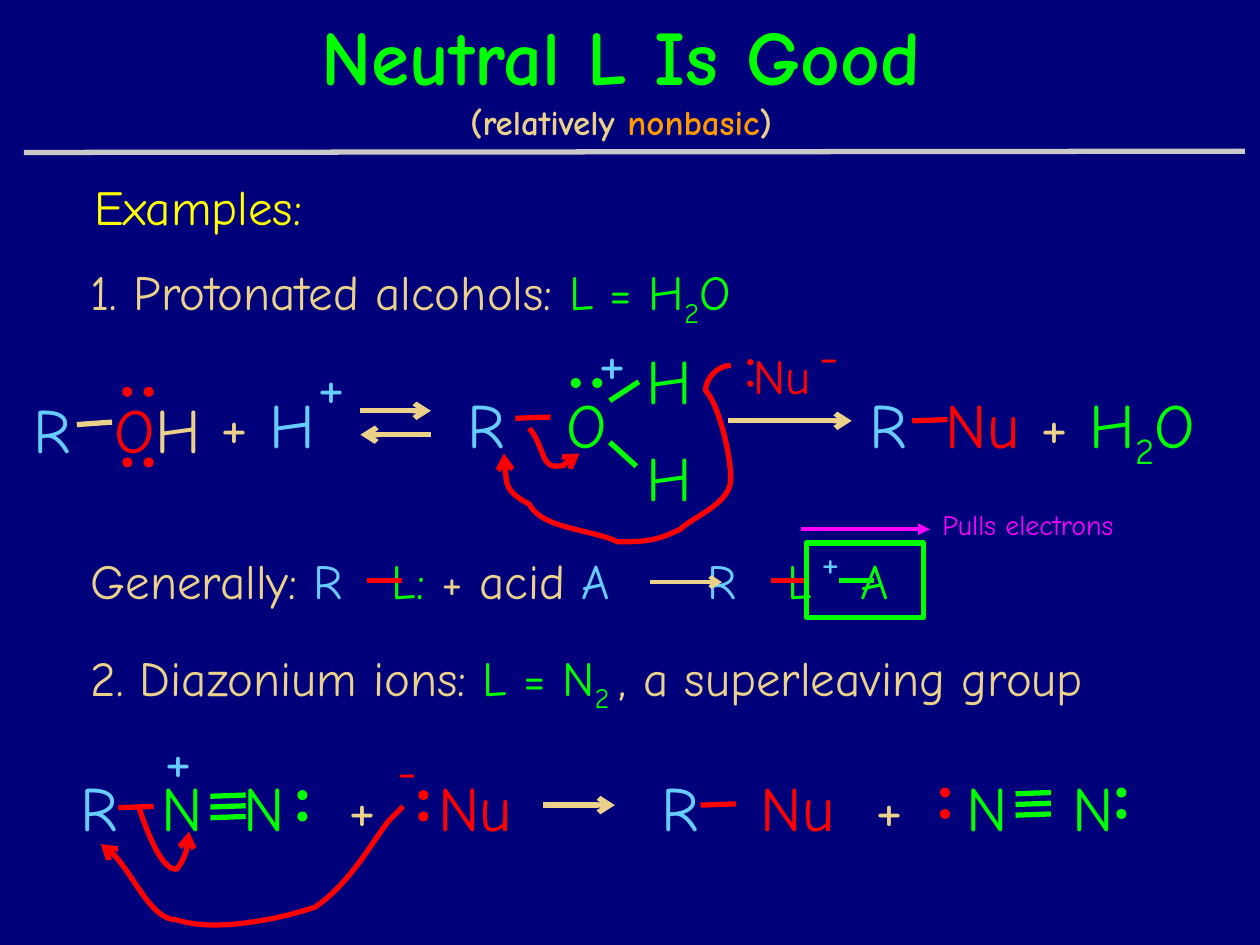
import pptx
import pptx.util
import pptx.dml.color
import pptx.enum.shapes
import pptx.enum.text
import lxml.etree

theme = {
    "font": "Comic Neue",
    "back": "00007A", "tan": "EBD189", "lime": "00FF00", "red": "FF0000",
    "sky": "66CCFF", "sun": "FFFF00", "pink": "FF00FF", "gold": "FF9900",
    "gray": "C9C9C9",
    "title": 44, "big": 36, "mid": 28, "sign": 24, "sub": 20, "note": 16,
    "thick": 3, "thin": 2.25,
}
# The grid has 100 columns and 75 rows.
wide, high = pptx.util.Inches(10), pptx.util.Inches(7.5)
cell = wide / 100
shapekind = pptx.enum.shapes.MSO_SHAPE
align = pptx.enum.text


def tint(name):
    return pptx.dml.color.RGBColor.from_string(theme[name])


def ink(shape, color, width="thick", ends=None):
    """Style an outline without shadow; ends maps headEnd or tailEnd to a type."""
    shape.line.color.rgb = tint(color)
    shape.line.width = pptx.util.Pt(theme[width])
    props = shape._element.spPr
    if props.find(pptx.oxml.ns.qn("a:effectLst")) is None:
        lxml.etree.SubElement(props, pptx.oxml.ns.qn("a:effectLst"))
    for end, kind in (ends or {}).items():
        tip = lxml.etree.SubElement(
            props.find(pptx.oxml.ns.qn("a:ln")), pptx.oxml.ns.qn("a:" + end))
        tip.set("type", kind)


deck = pptx.Presentation()
deck.slide_width, deck.slide_height = wide, high
slide = deck.slides.add_slide(deck.slide_layouts[6])
slide.background.fill.solid()
slide.background.fill.fore_color.rgb = tint("back")
shapes = slide.shapes

# Title
box = shapes.add_textbox(*(round(n * cell) for n in (6.8, 1.8, 85, 8.4)))
frame = box.text_frame
frame.word_wrap = True
frame.vertical_anchor = align.MSO_ANCHOR.MIDDLE
para = frame.paragraphs[0]
para.alignment = align.PP_ALIGN.CENTER
para.font.name, para.font.bold = theme["font"], True
for size, color, text in (
        ("title", "lime", "Neutral L Is Good"), ("sub", "tan", "(relatively "),
        ("sub", "gold", "nonbasic"), ("sub", "tan", ")")):
    run = para.add_run()
    run.text = text
    run.font.size = pptx.util.Pt(theme[size])
    run.font.color.rgb = tint(color)
    if size == "title":
        para.add_line_break()

# Texts: left, top, width, height, size, tab stops, runs (color, text, baseline)
texts = [
    (6.5, 13.5, 20.3, 5.7, "mid", [], [("sun", "Examples:")]),
    (6.2, 20.3, 84.8, 5.7, "mid", [], [
        ("tan", "1. Protonated alcohols: "), ("lime", "L = H"),
        ("lime", "2", -25), ("lime", "O")]),
    (6.2, 43.2, 69.7, 5.7, "mid", [23.9, 49, 55.3, 61.1], [
        ("tan", "Generally:"), ("sky", " R\t"), ("lime", "L: "),
        ("tan", "+ acid "), ("sky", "A\tR\t"), ("lime", "L\tA")]),
    (6.2, 50.9, 91.9, 5.7, "mid", [], [
        ("tan", "2. Diazonium ions: "), ("lime", "L = N"),
        ("lime", "2 ", -25), ("tan", ", a superleaving group")]),
    (1.7, 30.5, 17.9, 7, "big", [6.4], [
        ("sky", "R\t"), ("red", "O"), ("tan", "H")]),
    (16.5, 30.1, 16.2, 7, "big", [], [("tan", "+ "), ("sky", "H")]),
    (36.1, 30.1, 15.2, 7, "big", [7.9], [("sky", "R\t"), ("lime", "O")]),
    (50.3, 26.6, 5.8, 7, "big", [], [("lime", "H")]),
    (50.3, 34.3, 5.4, 7, "big", [], [("lime", "H")]),
    (58.8, 26.9, 10.6, 5.7, "mid", [], [("red", "Nu")]),
    (68, 30.1, 30, 7, "big", [6.1], [
        ("sky", "R\t"), ("red", "Nu"), ("tan", " + "), ("lime", "H"),
        ("lime", "2", -25), ("lime", "O")]),
    (5.4, 60.5, 87.7, 7, "big",
     [6.4, 12.95, 21.25, 28.4, 46.1, 54, 63.1, 70.3, 78.7], [
        ("sky", "R\t"), ("lime", "N\tN"), ("tan", "\t+\t"), ("red", "Nu\t"),
        ("sky", "R\t"), ("red", "Nu"), ("tan", "\t+\t"), ("lime", "N\tN")]),
    (73.8, 39.8, 17.1, 3.7, "note", [], [("pink", "Pulls electrons")]),
    (64.2, 42, 4.2, 5, "sign", [], [("sky", "+")]),
]
for left, top in ((24.2, 26.9), (46.5, 25), (12.1, 56.6)):
    texts.append((left, top, 7.7, 7, "big", [], [("sky", "+")]))
for left, top in ((64.1, 25.3), (30.6, 58.2)):
    texts.append((left, top, 7.6, 5.7, "mid", [], [("red", "-")]))

for *place, size, stops, runs in texts:
    box = shapes.add_textbox(*(round(n * cell) for n in place))
    box.text_frame.word_wrap = True
    para = box.text_frame.paragraphs[0]
    if stops:
        tabs = lxml.etree.SubElement(
            para._p.get_or_add_pPr(), pptx.oxml.ns.qn("a:tabLst"))
        for stop in stops:
            lxml.etree.SubElement(tabs, pptx.oxml.ns.qn("a:tab"),
                                  pos=str(round(stop * cell)), algn="l")
    para.font.name = theme["font"]
    para.font.size = pptx.util.Pt(theme[size])
    if len(runs) == 1:
        para.font.color.rgb = tint(runs[0][0])
    for color, text, *base in runs:
        run = para.add_run()
        run.text = text
        if len(runs) > 1:
            run.font.color.rgb = tint(color)
        if base:
            run._r.get_or_add_rPr().set("baseline", str(base[0] * 1000))

# Lone pairs: left, top, step across, step down, width, color
for left, top, across, down, size, color in (
        (9.7, 30.7, 1.7, 0, 0.8, "red"), (9.7, 36.3, 1.7, 0, 0.8, "red"),
        (45.3, 30, 1.7, 0, 0.8, "lime"), (59.3, 28.5, 0, 1.7, 0.5, "red"),
        (23.6, 62.7, 0, 1.7, 0.8, "lime"), (33.2, 62.7, 0, 1.7, 0.8, "red"),
        (74.6, 62.5, 0, 1.7, 0.8, "red"), (88.6, 62.5, 0, 1.7, 0.8, "lime")):
    for n in range(2):
        place = (left + n * across, top + n * down, size, size)
        dot = shapes.add_shape(shapekind.OVAL, *(round(v * cell) for v in place))
        dot.shadow.inherit = False
        dot.fill.solid()
        dot.fill.fore_color.rgb = tint(color)
        dot.line.fill.background()

# Lines: from, to, color, width, arrowheads
tail, head = {"tailEnd": "arrow"}, {"headEnd": "arrow"}
lines = [
    (1.9, 12.1, 98.8, 12, "gray", "thick", None),
    (28.6, 32.6, 34.2, 32.6, "tan", "thick", tail),
    (28.6, 34.5, 34.2, 34.5, "tan", "thick", head),
    (57.8, 33.4, 67.6, 33.4, "tan", "thick", tail),
    (43.1, 63.9, 48.8, 63.9, "tan", "thick", tail),
    (51.6, 46.2, 57.3, 46.2, "tan", "thin", tail),
    (63.6, 42, 73.8, 42, "pink", "thin", {"tailEnd": "triangle"}),
    (48.4, 31.8, 50.7, 30.3, "lime", "thick", None),
    (48.4, 35.1, 50.5, 37, "lime", "thick", None),
]
bonds = [
    (6.1, 33.7, 0.2, "tan"), (40.9, 33.2, 0.1, "red"),
    (72.4, 33.4, 0.1, "red"), (9.4, 64.1, 0.1, "red"),
    (55.6, 63.9, 0.1, "red"), (29.1, 46.1, 0, "red"),
    (61.2, 46.1, 0, "red"), (66.6, 46.1, 0, "lime"),
]
for left, top in ((16.7, 63.2), (80.6, 63)):
    bonds += [(left, top + n * 0.85, 0.1, "lime") for n in range(3)]
lines += [(x, y, x + 2.8, y - rise, color, "thick", None)
          for x, y, rise, color in bonds]
for *ends, color, width, tips in lines:
    line = shapes.add_connector(pptx.enum.shapes.MSO_CONNECTOR.STRAIGHT,
                                *(round(n * cell) for n in ends))
    ink(line, color, width, tips)

# Box around the leaving group
group = shapes.add_shape(shapekind.RECTANGLE,
                         *(round(n * cell) for n in (64, 43.1, 9.3, 5.9)))
group.shadow.inherit = False
group.fill.background()
ink(group, "lime")

# Electron-pushing arrows: a start, then three points for each cubic curve
for start, *points in (
        [(57.8, 29.3), (57.1, 29.4), (56.5, 29.5), (56.5, 30.9),
         (56.6, 32.4), (58.4, 36.2), (58, 38),
         (57.5, 39.9), (55.4, 41.2), (53.8, 42),
         (52.3, 42.8), (50.9, 43.1), (48.8, 42.8),
         (46.8, 42.5), (43.1, 41.5), (41.5, 40.3),
         (40, 39.2), (39.8, 36.7), (39.5, 35.9)],
        [(42.1, 33.8), (42.8, 35.3), (43.4, 36.8), (44.1, 37.1),
         (44.8, 37.4), (45.5, 36.5), (46.2, 35.6)],
        [(32.5, 64.3), (32.2, 64.4), (32.1, 63.7), (30.8, 64.9),
         (29.5, 66.2), (27.5, 70.4), (24.8, 71.8),
         (22, 73.2), (17.1, 74.3), (14.4, 73.4),
         (11.7, 72.6), (9.8, 68), (8.5, 66.6)],
        [(10.9, 64.4), (11.9, 66.6), (12.9, 68.8), (13.7, 69),
         (14.4, 69.2), (14.8, 67.5), (15.2, 65.8)]):
    pen = shapes.build_freeform(*start, scale=cell)
    pen.add_line_segments(points, close=False)
    curve = pen.convert_to_shape()
    curve.shadow.inherit = False
    curve.fill.background()
    ink(curve, "red", ends=tail)
    steps = list(curve._element.iter(pptx.oxml.ns.qn("a:lnTo")))
    route = steps[0].getparent()
    for n in range(0, len(steps), 3):
        bend = lxml.etree.SubElement(route, pptx.oxml.ns.qn("a:cubicBezTo"))
        for step in steps[n:n + 3]:
            bend.append(step[0])
            route.remove(step)

deck.save("out.pptx")
